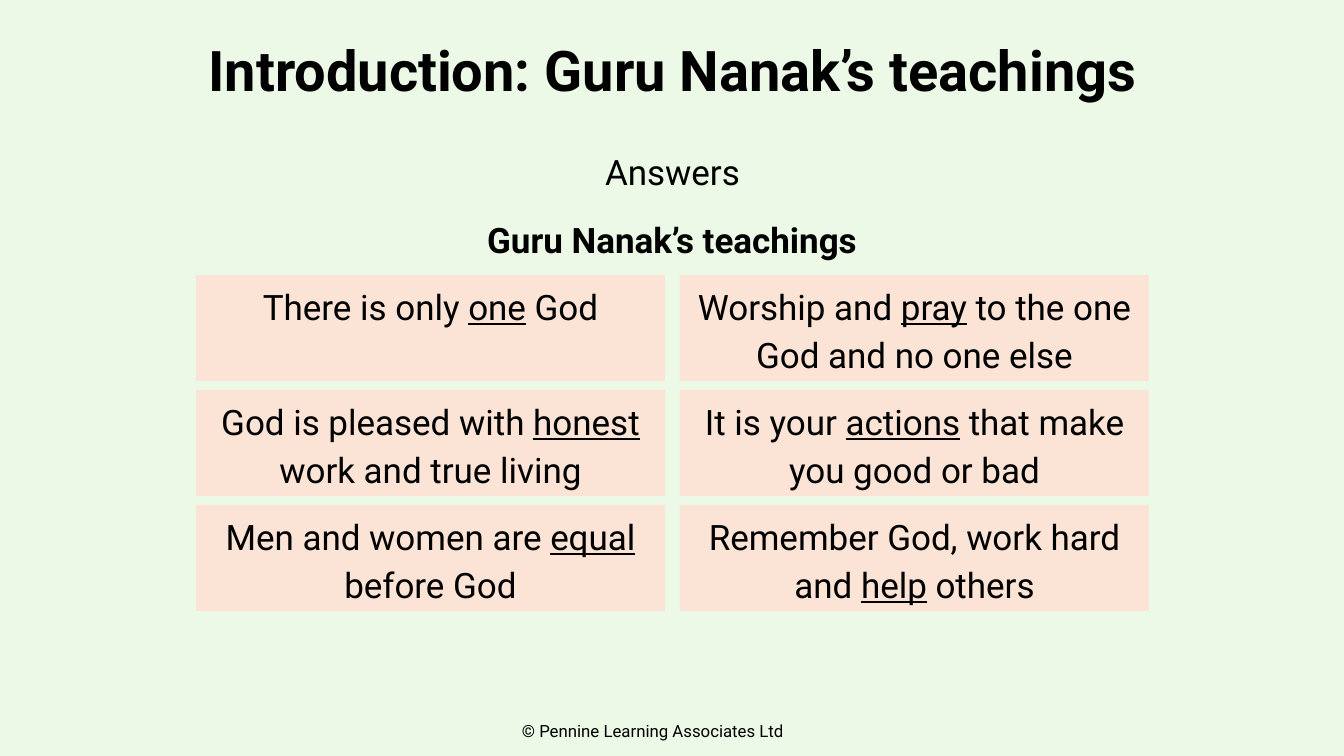
from dataclasses import dataclass

from pptx import Presentation
from pptx.dml.color import RGBColor
from pptx.enum.shapes import MSO_SHAPE
from pptx.enum.text import MSO_ANCHOR, MSO_AUTO_SIZE, PP_ALIGN
from pptx.util import Emu, Pt

RECT = MSO_SHAPE.RECTANGLE
TOP, MIDDLE = MSO_ANCHOR.TOP, MSO_ANCHOR.MIDDLE
LEFT, CENTER = PP_ALIGN.LEFT, PP_ALIGN.CENTER
NO_FIT = MSO_AUTO_SIZE.NONE

TITLE = "Introduction: Guru Nanak’s teachings"
ANSWERS = "Answers"
HEADING = "Guru Nanak’s teachings"
COPYRIGHT = "© Pennine Learning Associates Ltd"
TEACHINGS = [
    [("There is only ", "one", " God"),
     ("Worship and ", "pray", " to the one God and no one else")],
    [("God is pleased with ", "honest", " work and true living"),
     ("It is your ", "actions", " that make you good or bad")],
    [("Men and women are ", "equal", " before God"),
     ("Remember God, work hard and ", "help", " others")],
]


@dataclass(frozen=True)
class Theme:
    font: str = "Roboto"
    ink: RGBColor = RGBColor(0x00, 0x00, 0x00)
    page: RGBColor = RGBColor(0xEC, 0xF9, 0xE7)
    card: RGBColor = RGBColor(0xFB, 0xE3, 0xD6)
    title: int = 40
    body: int = 25
    small: int = 12
    title_spacing: float = 0.9
    spacing: float = 1.14


T = Theme()
SLIDE_W, SLIDE_H = 1344, 756
CARD_X, CARD_Y, CARD_W, CARD_H = 196, 275, 469, 106
GAP_X, GAP_Y = 15, 9


def px(n):
    return Emu(round(n * 914400 / 100.8))


def box(x, y, w, h):
    return [px(n) for n in (x, y, w, h)]


def write(sp, parts, size, bold=False, align=CENTER, spacing=1.0, anchor=TOP):
    tf = sp.text_frame
    tf.word_wrap = True
    tf.auto_size = NO_FIT
    tf.vertical_anchor = anchor
    p = tf.paragraphs[0]
    p.alignment = align
    p.line_spacing = spacing
    p.font.name, p.font.size, p.font.bold = T.font, Pt(size), bold
    p.font.color.rgb = T.ink
    for i, part in enumerate(parts):
        r = p.add_run()
        r.text = part
        if i == 1:
            r.font.underline = True


def add_panel(s, bounds, fill):
    sp = s.shapes.add_shape(RECT, *bounds)
    sp.shadow.inherit = False
    sp.fill.solid()
    sp.fill.fore_color.rgb = fill
    sp.line.fill.background()
    return sp


def main():
    prs = Presentation()
    prs.slide_width, prs.slide_height = px(SLIDE_W), px(SLIDE_H)
    s = prs.slides.add_slide(prs.slide_layouts[5])
    s.background.fill.solid()
    s.background.fill.fore_color.rgb = T.page

    footer = s.shapes.add_textbox(*box(512, 716, 321, 30))
    write(footer, [COPYRIGHT], T.small, align=LEFT)

    title = s.shapes.title
    title.left, title.top, title.width, title.height = box(93, 0, 1159, 146)
    write(title, [TITLE], T.title, True, spacing=T.title_spacing, anchor=MIDDLE)

    answers = add_panel(s, box(489, 146, 367, 52), T.page)
    write(answers, [ANSWERS], T.body)

    heading = s.shapes.add_textbox(*box(469, 208, 406, 57))
    write(heading, [HEADING], T.body, True, spacing=T.spacing)

    for i, row in enumerate(TEACHINGS):
        for j, parts in enumerate(row):
            x = CARD_X + j * (CARD_W + GAP_X)
            y = CARD_Y + i * (CARD_H + GAP_Y)
            card = add_panel(s, box(x, y, CARD_W, CARD_H), T.card)
            write(card, parts, T.body, spacing=T.spacing)

    prs.save("out.pptx")


if __name__ == "__main__":
    main()
